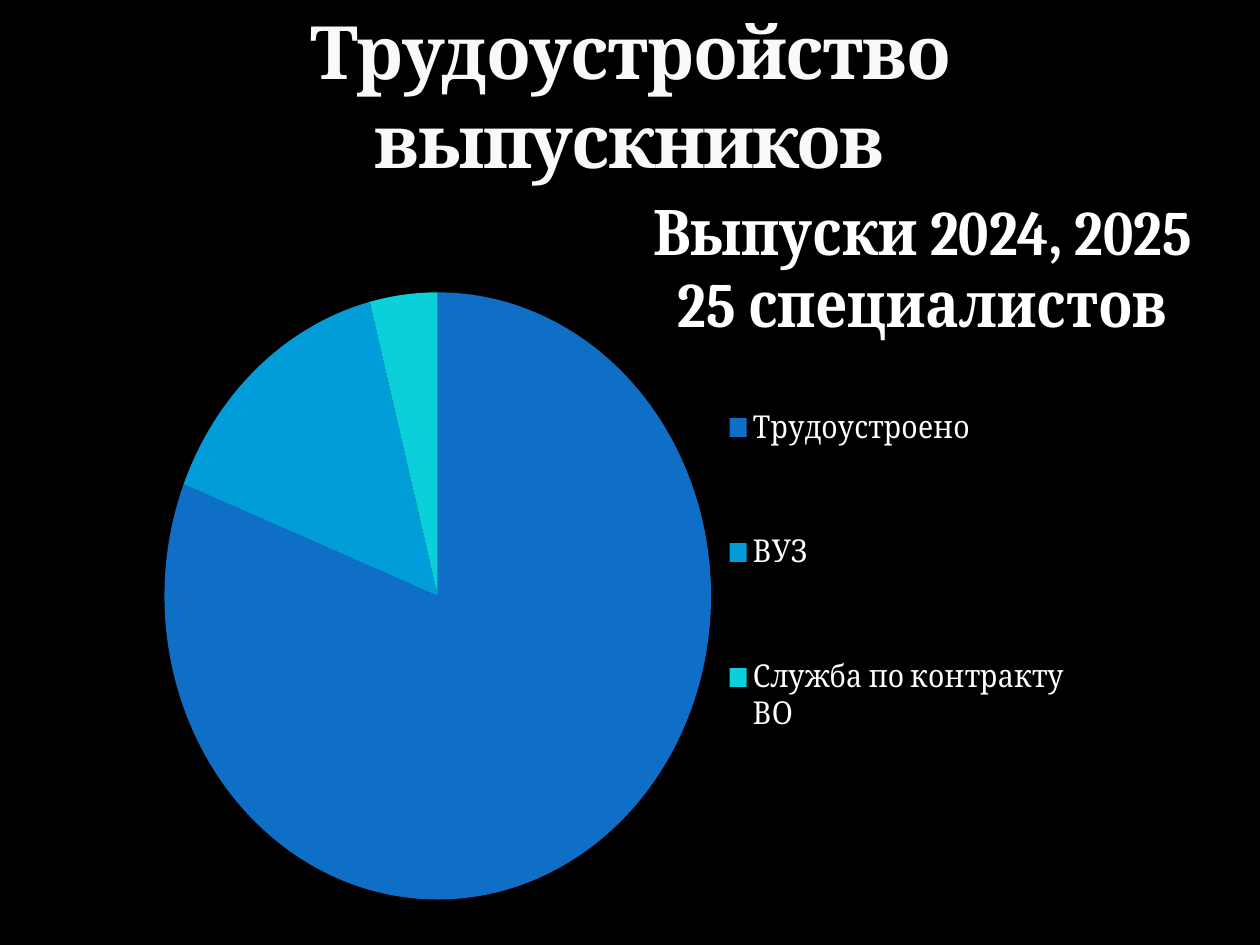
from lxml import etree
from pptx import Presentation
from pptx.chart.data import CategoryChartData
from pptx.dml.color import RGBColor
from pptx.enum.chart import XL_CHART_TYPE, XL_LEGEND_POSITION
from pptx.enum.text import MSO_ANCHOR, PP_ALIGN
from pptx.oxml import parse_xml
from pptx.oxml.ns import nsdecls, qn
from pptx.util import Inches, Pt

PIE = XL_CHART_TYPE.PIE
RIGHT = XL_LEGEND_POSITION.RIGHT
BOTTOM = MSO_ANCHOR.BOTTOM
CENTER = PP_ALIGN.CENTER

BLACK = RGBColor(0x00, 0x00, 0x00)
WHITE = RGBColor(0xFF, 0xFF, 0xFF)
OFF_WHITE = RGBColor(0xF9, 0xF9, 0xF9)
BLUE = RGBColor(0x0F, 0x6F, 0xC6)
SKY = RGBColor(0x00, 0x9D, 0xD9)
CYAN = RGBColor(0x0B, 0xD0, 0xD9)
FONT = "Cambria"

HEADING = "Трудоустройство выпускников"
CHART_TITLE = ["Выпуски 2024, 2025", "25 специалистов"]
OUTCOMES = [
    ("Трудоустроено", 81, BLUE),
    ("ВУЗ", 15, SKY),
    ("Служба по контракту ВО", 4, CYAN),
]

HEADING_BOX = (0.5, 0.17, 9, 1.33)
CHART_BOX = (0.59, 1.47, 8.9, 5.67)
# Fractions of the chart area
PLOT_LAYOUT = {"x": 0.05, "y": 0.15, "w": 0.62, "h": 0.85}
TITLE_LAYOUT = {"x": 0.57, "y": 0.01}
LEGEND_LAYOUT = {"x": 0.64, "y": 0.19, "w": 0.35, "h": 0.7}


def style_font(font, size, color, bold):
    values = {"name": FONT, "size": Pt(size), "bold": bold}
    for name, value in values.items():
        setattr(font, name, value)
    font.color.rgb = color


def place(part, layout, index, inner=False):
    """Give a chart part a manual layout, inserted at its schema position."""
    for old in part.findall(qn("c:layout")):
        part.remove(old)
    element = parse_xml(f"<c:layout {nsdecls('c')}><c:manualLayout/></c:layout>")
    settings = {"layoutTarget": "inner"} if inner else {}
    settings |= {"xMode": "edge", "yMode": "edge"} | layout
    for name, value in settings.items():
        etree.SubElement(element[0], qn(f"c:{name}")).set("val", str(value))
    part.insert(index, element)


def add_heading(slide):
    frame = slide.shapes.add_textbox(*map(Inches, HEADING_BOX)).text_frame
    frame.word_wrap = True
    frame.vertical_anchor = BOTTOM
    paragraph = frame.paragraphs[0]
    paragraph.alignment = CENTER
    run = paragraph.add_run()
    run.text = HEADING
    style_font(run.font, 42, OFF_WHITE, True)
    properties = run.font._element
    properties.set("spc", "-100")
    properties.insert(0, parse_xml(
        f'<a:ln {nsdecls("a")} w="3175"><a:solidFill><a:srgbClr val="04566D">'
        '<a:alpha val="25000"/></a:srgbClr></a:solidFill></a:ln>'))


def add_outcome_chart(slide):
    data = CategoryChartData()
    data.categories = [name for name, _, _ in OUTCOMES]
    data.add_series("Series 1", [share for _, share, _ in OUTCOMES])
    chart = slide.shapes.add_chart(PIE, *map(Inches, CHART_BOX), data).chart
    style_font(chart.font, 18, WHITE, False)

    plot = chart.plots[0]
    plot.vary_by_categories = True
    for index, (_, _, color) in enumerate(OUTCOMES):
        fill = plot.series[0].points[index].format.fill
        fill.solid()
        fill.fore_color.rgb = color

    chart.has_title = True
    frame = chart.chart_title.text_frame
    for index, line in enumerate(CHART_TITLE):
        paragraph = frame.add_paragraph() if index else frame.paragraphs[0]
        paragraph.alignment = CENTER
        run = paragraph.add_run()
        run.text = line
        style_font(run.font, 36, WHITE, True)

    chart.has_legend = True
    legend = chart.legend
    legend.position = RIGHT
    legend.include_in_layout = False
    style_font(legend.font, 18, WHITE, False)

    plot_area = chart._chartSpace.chart.plotArea
    place(plot_area, PLOT_LAYOUT, 0, inner=True)
    place(chart.chart_title._element, TITLE_LAYOUT, 1)
    place(legend._element, LEGEND_LAYOUT, 1)


def main():
    deck = Presentation()
    deck.slide_width, deck.slide_height = Inches(10), Inches(7.5)
    slide = deck.slides.add_slide(deck.slide_layouts[6])
    slide.background.fill.solid()
    slide.background.fill.fore_color.rgb = BLACK
    add_heading(slide)
    add_outcome_chart(slide)
    deck.save("out.pptx")


if __name__ == "__main__":
    main()
